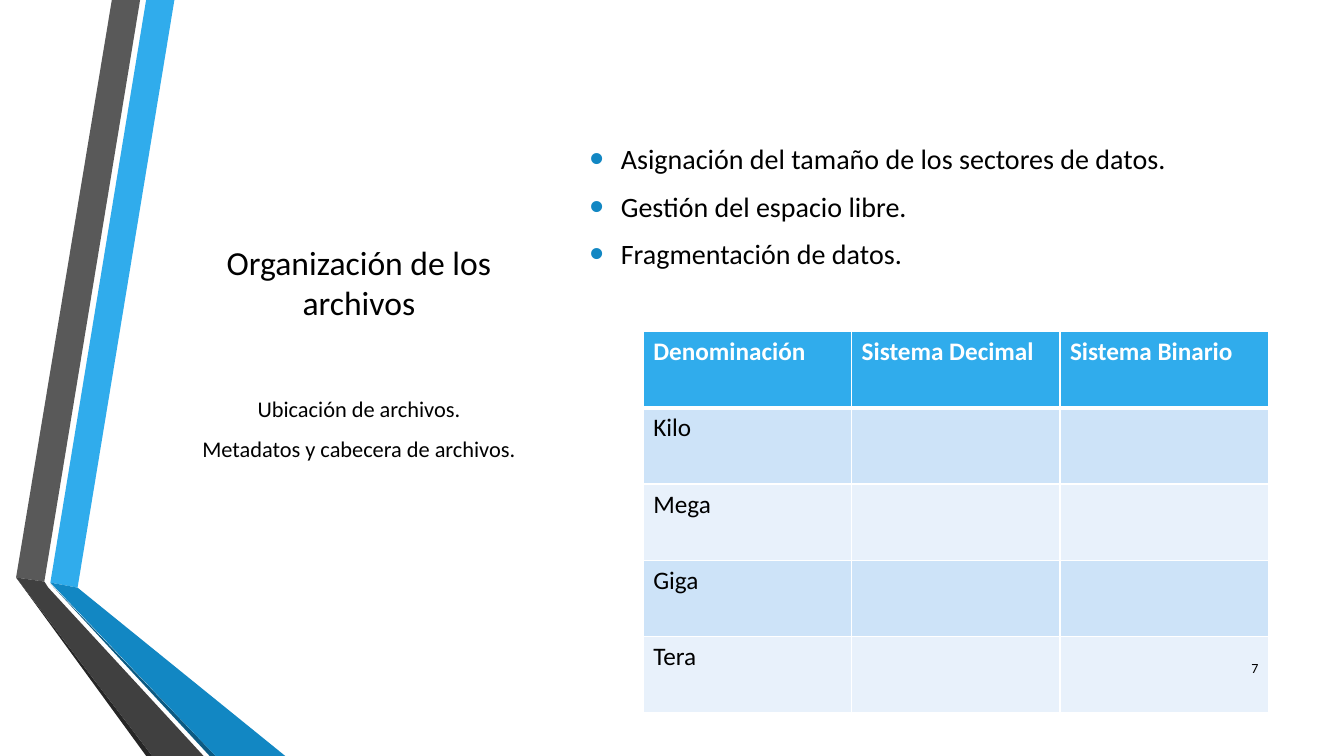
from lxml.etree import SubElement
from pptx import Presentation
from pptx.dml.color import RGBColor
from pptx.enum.text import MSO_ANCHOR as Anchor, MSO_AUTO_SIZE as AutoSize, PP_ALIGN as Align
from pptx.oxml.ns import qn
from pptx.util import Inches, Pt

FONT = "Calibri"
COLORS = {
    "sky": "30ACEC", "blue": "1287C3", "navy": "0C5A82",
    "gray": "595959", "dark": "404040", "shadow": "262626",
    "band": "CDE3F8", "pale": "E8F1FB", "text": "000000", "white": "FFFFFF",
}
RIBBONS = [
    ("sky", [(0.5, 5.78), (0.77, 5.83), (1.73, 0), (1.45, 0)]),
    ("gray", [(1.39, 0), (1.11, 0), (0.16, 5.73), (0.44, 5.77)]),
    ("shadow", [(0.16, 5.73), (1.45, 7.5), (1.51, 7.5)]),
    ("navy", [(0.5, 5.79), (2.08, 7.5), (2.14, 7.5)]),
    ("blue", [(0.5, 5.78), (2.14, 7.5), (2.83, 7.5), (0.77, 5.83)]),
    ("dark", [(2.02, 7.5), (0.48, 5.83), (0.44, 5.77), (0.16, 5.73), (1.51, 7.5)]),
]
TOPICS = [
    "Asignación del tamaño de los sectores de datos.",
    "Gestión del espacio libre.",
    "Fragmentación de datos.",
]
SUBTOPICS = ["Ubicación de archivos.", "Metadatos y cabecera de archivos."]
HEADINGS = ["Denominación", "Sistema Decimal", "Sistema Binario"]
UNITS = ["Kilo", "Mega", "Giga", "Tera"]


def rgb(name):
    """Return the palette colour with this name."""
    return RGBColor.from_string(COLORS[name])


def write(paragraph, text, size, color="text", bold=False):
    """Add one formatted run to a paragraph."""
    run = paragraph.add_run()
    run.text = text
    run.font.name, run.font.size, run.font.bold = FONT, Pt(size), bold
    run.font.color.rgb = rgb(color)


def add_bullet(paragraph):
    """Give a paragraph a large blue bullet with a hanging indent."""
    props = paragraph._p.get_or_add_pPr()
    props.set("marL", str(Inches(0.31)))
    props.set("indent", str(-Inches(0.31)))
    SubElement(SubElement(props, qn("a:buClr")), qn("a:srgbClr"), val=COLORS["blue"])
    SubElement(props, qn("a:buSzPct"), val="145000")
    SubElement(props, qn("a:buFont"), typeface="Arial")
    SubElement(props, qn("a:buChar"), char="•")


def add_ribbons(slide):
    """Draw the folded ribbons along the left edge."""
    for color, points in RIBBONS:
        corners = [(Inches(x), Inches(y)) for x, y in points]
        builder = slide.shapes.build_freeform(*corners[0])
        builder.add_line_segments(corners[1:], close=True)
        ribbon = builder.convert_to_shape()
        ribbon.shadow.inherit = False
        ribbon.fill.solid()
        ribbon.fill.fore_color.rgb = rgb(color)
        ribbon.line.fill.background()


def place_title(slide, left, top, width, height):
    """Place the slide title in its box."""
    title = slide.shapes.title
    title.left, title.top = Inches(left), Inches(top)
    title.width, title.height = Inches(width), Inches(height)
    frame = title.text_frame
    frame.word_wrap, frame.auto_size = True, AutoSize.NONE
    frame.vertical_anchor = Anchor.BOTTOM
    frame.paragraphs[0].alignment = Align.CENTER
    write(frame.paragraphs[0], "Organización de los archivos", 24)


def add_lines(slide, left, top, width, height, lines, size,
              align=Align.LEFT, bulleted=False, spaced=True):
    """Add a vertically centred text box with one paragraph per line."""
    box = slide.shapes.add_textbox(Inches(left), Inches(top), Inches(width), Inches(height))
    frame = box.text_frame
    frame.word_wrap, frame.vertical_anchor = True, Anchor.MIDDLE
    for index, line in enumerate(lines):
        paragraph = frame.add_paragraph() if index else frame.paragraphs[0]
        paragraph.alignment = align
        if spaced:
            paragraph.space_before, paragraph.space_after = Pt(size * 0.2), Pt(6)
        if bulleted:
            add_bullet(paragraph)
        write(paragraph, line, size)


def style_cell(cell, fill, top, bottom):
    """Set the white borders and the fill of a table cell."""
    props = cell._tc.get_or_add_tcPr()
    for side, points in (("lnL", 1), ("lnR", 1), ("lnT", top), ("lnB", bottom)):
        border = SubElement(props, qn(f"a:{side}"), w=str(Pt(points)))
        SubElement(SubElement(border, qn("a:solidFill")), qn("a:srgbClr"), val=COLORS["white"])
    cell.fill.solid()
    cell.fill.fore_color.rgb = rgb(fill)


def add_units_table(slide, left, top, width, height):
    """Add the table of unit names with empty decimal and binary columns."""
    rows = [HEADINGS] + [[unit, "", ""] for unit in UNITS]
    table = slide.shapes.add_table(len(rows), len(HEADINGS), Inches(left), Inches(top),
                                   Inches(width), Inches(height)).table
    for r, row in enumerate(rows):
        header = r == 0
        fill = "sky" if header else ("pale", "band")[r % 2]
        for c, text in enumerate(row):
            cell = table.cell(r, c)
            style_cell(cell, fill, 3 if r == 1 else 1, 3 if header else 1)
            if text:
                write(cell.text_frame.paragraphs[0], text, 18,
                      "white" if header else "text", header)


def build_slide(deck):
    """Compose the file organisation slide."""
    slide = deck.slides.add_slide(deck.slide_layouts.get_by_name("Title Only"))
    add_ribbons(slide)
    place_title(slide, 1.62, 1.75, 3.88, 1.5)
    add_lines(slide, 5.75, 0.75, 6.83, 2.59, TOPICS, 20, bulleted=True)
    add_lines(slide, 1.62, 3.25, 3.88, 2, SUBTOPICS, 16, Align.CENTER)
    add_units_table(slide, 6.38, 3.29, 6.2, 3.78)
    add_lines(slide, 11.98, 6.43, 0.6, 0.4, ["7"], 10, Align.RIGHT, spaced=False)


def main():
    """Build and save the presentation."""
    deck = Presentation()
    deck.slide_width, deck.slide_height = Inches(13.33), Inches(7.5)
    build_slide(deck)
    deck.save("out.pptx")


if __name__ == "__main__":
    main()
